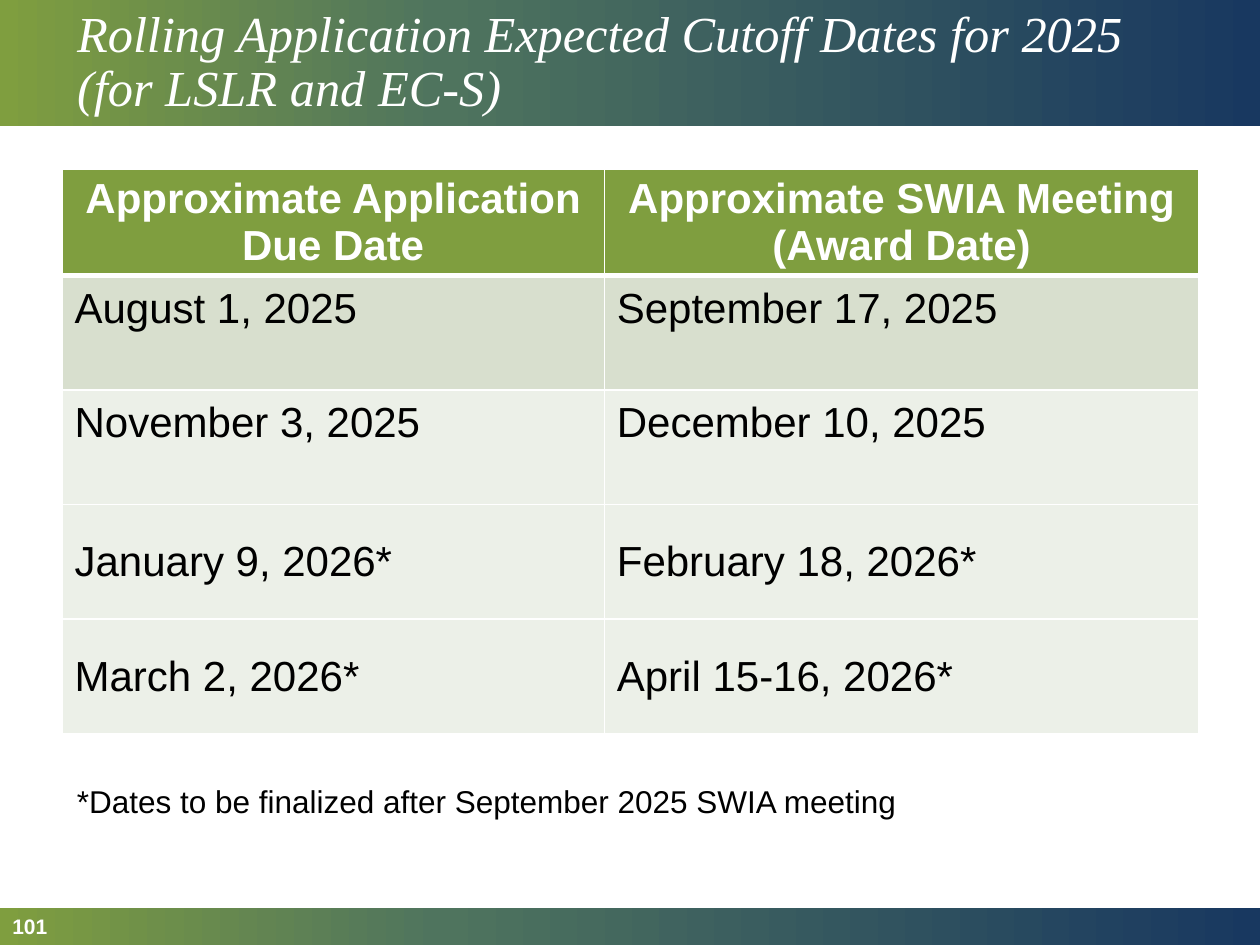
from copy import deepcopy
from dataclasses import dataclass

from pptx import Presentation
from pptx import util as u
from pptx.dml.color import RGBColor
from pptx.enum import shapes, text
from pptx.oxml import parse_xml
from pptx.oxml.ns import nsdecls, qn


@dataclass(frozen=True)
class Theme:
    white: str = "FFFFFF"
    black: str = "000000"
    green: str = "7F9E3F"
    first_row: str = "D8DFCE"
    other_rows: str = "ECF0E8"
    gradient: tuple = ((0, "7F9E3F"), (0.35, "4F745E"), (1, "183860"))
    title_font: str = "Times New Roman"
    body_font: str = "Arial"
    title_size: float = 28.8
    table_size: float = 24
    note_size: float = 18
    number_size: float = 12


THEME = Theme()
HEADER = ("Approximate Application Due Date", "Approximate SWIA Meeting (Award Date)")
DATES = (
    ("August 1, 2025", "September 17, 2025"),
    ("November 3, 2025", "December 10, 2025"),
    ("January 9, 2026*", "February 18, 2026*"),
    ("March 2, 2026*", "April 15-16, 2026*"),
)
TOP_ALIGNED_ROWS = (1, 2)


def cm(box):
    return [u.Cm(v) for v in box]


def style(p, size, color, font=THEME.body_font, bold=False, italic=False):
    p.font.name, p.font.size = font, u.Pt(size)
    p.font.bold, p.font.italic = bold, italic
    p.font.color.rgb = RGBColor.from_string(color)


def add_band(s, box):
    """Gradient strip across the slide."""
    sp = s.shapes.add_shape(shapes.MSO_SHAPE.RECTANGLE, *cm(box))
    sp.shadow.inherit = False
    sp.line.fill.background()
    sp.fill.gradient()
    sp.fill.gradient_angle = 0
    # A new gradient has two stops; add the third
    stops = sp._element.spPr.find(qn("a:gradFill")).find(qn("a:gsLst"))
    stops.append(deepcopy(stops[-1]))
    for stop, (position, color) in zip(sp.fill.gradient_stops, THEME.gradient):
        stop.position = position
        stop.color.rgb = RGBColor.from_string(color)


def add_text(s, box, words, size, color, bold=False, wrap=True, anchor=text.MSO_ANCHOR.TOP):
    tf = s.shapes.add_textbox(*cm(box)).text_frame
    tf.word_wrap, tf.vertical_anchor = wrap, anchor
    tf.text = words
    style(tf.paragraphs[0], size, color, bold=bold)


def add_header(s, box):
    """Top band with the title over it."""
    left, top, width, height = box
    add_band(s, box)
    title = s.shapes.title
    s.shapes._spTree.append(title._element)  # bring in front of the band
    title.left, title.top, title.width, title.height = cm((left + 1.3, top, width - 2.29, height))
    tf = title.text_frame
    tf.text = "Rolling Application Expected Cutoff Dates for 2025 (for LSLR and EC-S)"
    tf.word_wrap, tf.auto_size = True, text.MSO_AUTO_SIZE.NONE
    tf.vertical_anchor = text.MSO_ANCHOR.MIDDLE
    p = tf.paragraphs[0]
    p.alignment, p.line_spacing = text.PP_ALIGN.LEFT, 0.9
    style(p, THEME.title_size, THEME.white, THEME.title_font, italic=True)


def add_footer(s, box):
    """Bottom band with the slide number."""
    left, top, _, height = box
    add_band(s, box)
    add_text(s, (left, top, 5.72, height), "101", THEME.number_size, THEME.white,
             bold=True, anchor=text.MSO_ANCHOR.MIDDLE)


def set_borders(cell, **widths):
    tcPr = cell._tc.get_or_add_tcPr()
    for i, side in enumerate(("L", "R", "T", "B")):
        width = u.Pt(widths.get(side, 1))
        tcPr.insert(i, parse_xml(
            f'<a:ln{side} {nsdecls("a")} w="{width}"><a:solidFill>'
            f'<a:srgbClr val="{THEME.white}"/></a:solidFill></a:ln{side}>'))


def add_dates_table(s, box, column_share=0.477, header_height=1.55, row_height=2.31):
    left, top, width, height = box
    rows = (HEADER, *DATES)
    table = s.shapes.add_table(len(rows), len(HEADER), *cm(box)).table
    table.columns[0].width = u.Cm(width * column_share)
    table.columns[1].width = u.Cm(width * (1 - column_share))
    for r, values in enumerate(rows):
        is_header = r == 0
        table.rows[r].height = u.Cm(header_height if is_header else row_height)
        fill = (THEME.green, THEME.first_row)[r] if r < 2 else THEME.other_rows
        for c, value in enumerate(values):
            cell = table.cell(r, c)
            cell.text = value
            cell.fill.solid()
            cell.fill.fore_color.rgb = RGBColor.from_string(fill)
            cell.vertical_anchor = text.MSO_ANCHOR.MIDDLE
            if r in TOP_ALIGNED_ROWS:
                cell.vertical_anchor = text.MSO_ANCHOR.TOP
                cell.margin_top = u.Cm(0.2)
            p = cell.text_frame.paragraphs[0]
            p.alignment = text.PP_ALIGN.CENTER if is_header else text.PP_ALIGN.LEFT
            style(p, THEME.table_size, THEME.white if is_header else THEME.black, bold=is_header)
            # Heavy rule between the header and the dates
            set_borders(cell, B=3 if is_header else 1, T=3 if r == 1 else 1)


def main():
    prs = Presentation()
    prs.slide_width, prs.slide_height = u.Cm(25.4), u.Cm(19.05)
    s = prs.slides.add_slide(prs.slide_layouts[5])
    add_header(s, (0, 0, 25.4, 2.54))
    add_dates_table(s, (1.25, 3.41, 22.92, 11.58))
    add_footer(s, (0, 18.31, 25.4, 0.74))
    add_text(s, (1.3, 15.65, 17.2, 1.02), "*Dates to be finalized after September 2025 SWIA meeting",
             THEME.note_size, THEME.black, wrap=False)
    prs.save("out.pptx")


if __name__ == "__main__":
    main()
